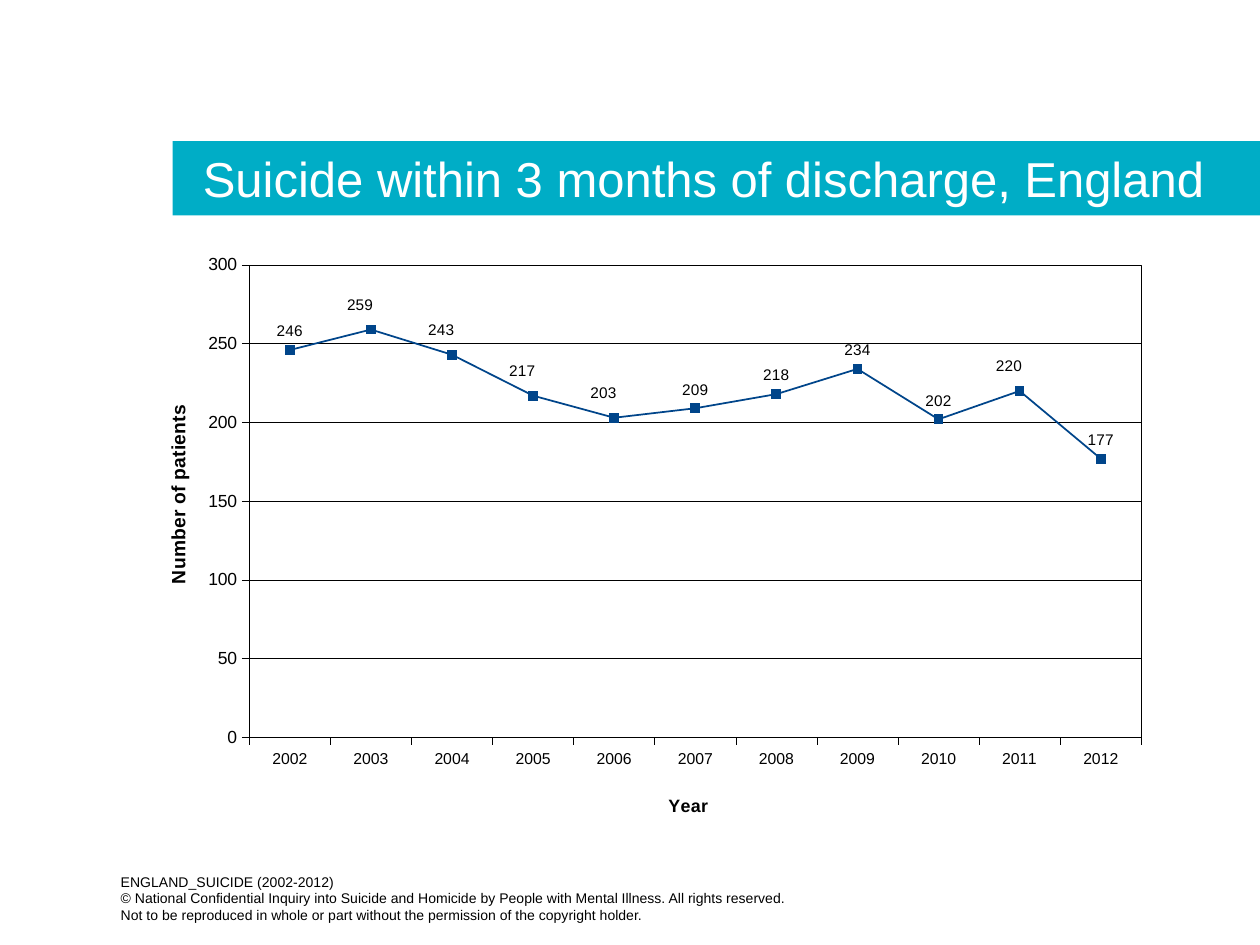
from lxml import etree
from pptx import Presentation, oxml
from pptx import util as u
from pptx.chart.data import CategoryChartData
from pptx.dml.color import RGBColor
from pptx.enum import chart as c
from pptx.enum import text as t
from pptx.oxml import ns

COLORS = {
    "banner": "00ADC6",
    "white": "FFFFFF",
    "black": "000000",
    "series": "00458A",
    "marker": "003F7E",
}
PATIENTS = [246, 259, 243, 217, 203, 209, 218, 234, 202, 220, 177]
YEARS = [str(2002 + index) for index in range(len(PATIENTS))]
RAISED_YEARS = {"2003", "2004", "2005", "2006", "2011"}


def color(name):
    return RGBColor.from_string(COLORS[name])


def format_font(font, size, name="black", bold=False):
    font.name = "Arial"
    font.size = u.Pt(size)
    font.bold = bold
    font.color.rgb = color(name)


def write(frame, content, size, name="black", bold=False, align=None):
    for index, line in enumerate(content.split("\n")):
        paragraph = frame.add_paragraph() if index else frame.paragraphs[0]
        paragraph.alignment = align
        run = paragraph.add_run()
        run.text = line
        format_font(run.font, size, name, bold)


def format_line(line, name, width):
    line.color.rgb = color(name)
    line.width = u.Pt(width)


def set_layout(element, index, **values):
    for old in element.findall(ns.qn("c:layout")):
        element.remove(old)
    layout = etree.Element(ns.qn("c:layout"))
    manual = etree.SubElement(layout, ns.qn("c:manualLayout"))
    for tag, value in values.items():
        etree.SubElement(manual, ns.qn(f"c:{tag}")).set("val", str(value))
    element.insert(index, layout)


class SlideBuilder:
    def __init__(self, presentation):
        self.slide = presentation.slides.add_slide(presentation.slide_layouts[5])

    def title(self, content, left, top, width, height):
        shape = self.slide.shapes.title
        shape.left, shape.top = u.Inches(left), u.Inches(top)
        shape.width, shape.height = u.Inches(width), u.Inches(height)
        shape.fill.solid()
        shape.fill.fore_color.rgb = color("banner")
        frame = shape.text_frame
        frame.auto_size = t.MSO_AUTO_SIZE.NONE
        frame.vertical_anchor = t.MSO_ANCHOR.MIDDLE
        frame.margin_left = u.Inches(0.24)
        frame.margin_top = frame.margin_right = frame.margin_bottom = 0
        write(frame, content, 28, "white", align=t.PP_ALIGN.LEFT)

    def note(self, content, left, top, width, height):
        shape = self.slide.shapes.add_textbox(
            u.Inches(left), u.Inches(top), u.Inches(width), u.Inches(height))
        shape.text_frame.word_wrap = False
        write(shape.text_frame, content, 8)

    def axis(self, axis, title, title_size, tick_size, x, y):
        axis.major_tick_mark = c.XL_TICK_MARK.OUTSIDE
        axis.minor_tick_mark = c.XL_TICK_MARK.NONE
        format_font(axis.tick_labels.font, tick_size)
        format_line(axis.format.line, "black", 0.25)
        write(axis.axis_title.text_frame, title, title_size, bold=True)
        set_layout(axis.axis_title.element, 1, xMode="edge", yMode="edge", x=x, y=y)

    def point_label(self, series, index, year):
        label = series.points[index].data_label
        format_font(label.font, 8.8)
        label.position = c.XL_LABEL_POSITION.ABOVE

    def line_chart(self, left, top, width, height):
        data = CategoryChartData(number_format="0")
        data.categories = YEARS
        data.add_series("Series 1", PATIENTS)
        chart = self.slide.shapes.add_chart(
            c.XL_CHART_TYPE.LINE_MARKERS, u.Inches(left), u.Inches(top),
            u.Inches(width), u.Inches(height), data).chart
        chart.has_legend = False
        chart.has_title = False
        format_font(chart.font, 10.2)

        self.axis(chart.category_axis, "Year", 10.2, 9, 0.51, 0.91)
        values = chart.value_axis
        self.axis(values, "Number of patients", 11, 10, 0.04, 0.29)
        values.minimum_scale, values.maximum_scale, values.major_unit = 0, 300, 50
        values.tick_labels.number_format = "0"
        values.tick_labels.number_format_is_linked = False
        format_line(values.major_gridlines.format.line, "black", 0.25)
        body = next(values.axis_title.element.iter(ns.qn("a:bodyPr")))
        body.set("rot", "-5400000")
        body.set("vert", "horz")

        plot = chart.plots[0]
        plot.vary_by_categories = False
        series = plot.series[0]
        series.smooth = False
        format_line(series.format.line, "series", 1)
        series.marker.style = c.XL_MARKER_STYLE.SQUARE
        series.marker.size = 5
        series.marker.format.fill.solid()
        series.marker.format.fill.fore_color.rgb = color("marker")
        format_line(series.marker.format.line, "series", 0.25)
        for index, year in enumerate(YEARS):
            self.point_label(series, index, year)
        for year, label in zip(YEARS, chart.element.iter(ns.qn("c:dLbl"))):
            x, y = (-0.01, -0.01) if year in RAISED_YEARS else (0, 0)
            set_layout(label, 1, x=x, y=y)

        area = next(chart.element.iter(ns.qn("c:plotArea")))
        set_layout(area, 0, layoutTarget="inner", xMode="edge", yMode="edge",
                   x=0.122, y=0.073, w=0.832, h=0.753)
        area.append(oxml.parse_xml(
            f'<c:spPr {ns.nsdecls("c", "a")}>'
            f'<a:solidFill><a:srgbClr val="{COLORS["white"]}"/></a:solidFill>'
            f'<a:ln w="3175"><a:solidFill><a:srgbClr val="{COLORS["black"]}"/>'
            '</a:solidFill></a:ln></c:spPr>'))


def main():
    presentation = Presentation()
    presentation.slide_width = u.Inches(10)
    presentation.slide_height = u.Inches(7.5)
    builder = SlideBuilder(presentation)
    builder.title("Suicide within 3 months of discharge, England", 1.37, 1.12, 8.63, 0.59)
    builder.note(
        "ENGLAND_SUICIDE (2002-2012)\n"
        "© National Confidential Inquiry into Suicide and Homicide by People "
        "with Mental Illness. All rights reserved.\n"
        "Not to be reproduced in whole or part without the permission of the "
        "copyright holder.", 0.86, 6.88, 5.55, 0.51)
    builder.line_chart(0.94, 1.74, 8.51, 4.98)
    presentation.save("out.pptx")


if __name__ == "__main__":
    main()
